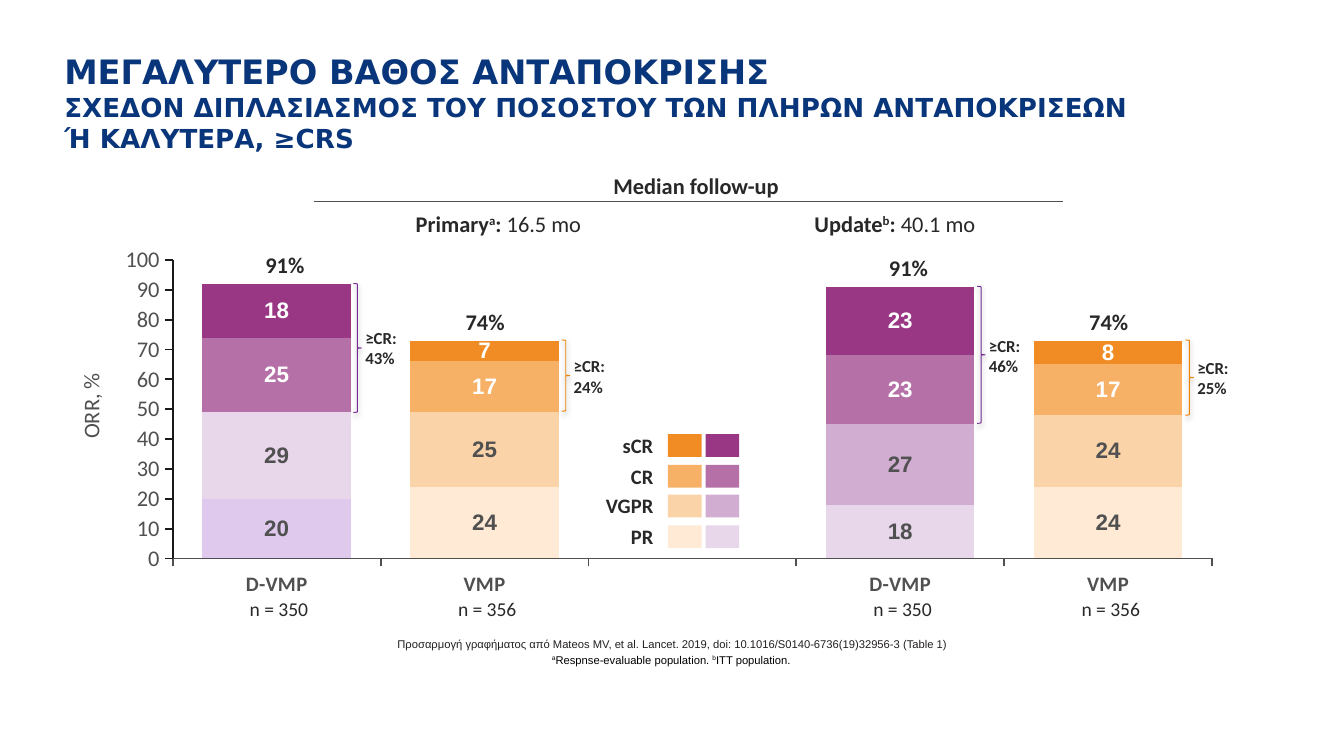
from collections import namedtuple
from dataclasses import dataclass

from lxml import etree
from pptx import Presentation
from pptx import util as u
from pptx.chart import data as chart_data
from pptx.dml.color import RGBColor
from pptx.enum import chart as ch, shapes, text
from pptx.oxml import parse_xml
from pptx.oxml.ns import nsdecls, qn

Box = namedtuple("Box", "left top width height")
Arm = namedtuple("Arm", "name patients total complete values colors accent nudge")


@dataclass(frozen=True)
class Theme:
    title: str = "09357A"
    ink: str = "282828"
    grey: str = "505050"
    axis: str = "1A1A1A"
    source: str = "231F20"
    black: str = "000000"
    white: str = "FFFFFF"
    purple_line: str = "732C94"
    orange_line: str = "EF8200"
    # Shades run from PR up to sCR
    purple: tuple = ("E8D6EA", "D1AED1", "B571A7", "9A3784")
    early_purple: tuple = ("DFCAEE", "E8D6EA", "B571A7", "9A3784")
    orange: tuple = ("FEEAD5", "FBD3A9", "F7B167", "F18C25")
    head_font: str = "DejaVu Sans"
    body_font: str = "Calibri"
    note_font: str = "Arial"
    head: float = 18
    subhead: float = 14
    body: float = 12
    label: float = 11
    patients: float = 10.5
    small: float = 9
    note: float = 6


T = Theme()
RESPONSES = ("PR", "VGPR", "CR", "sCR")
ARMS = (
    Arm("D-VMP", 350, 91, 43, (20, 29, 25, 18), T.early_purple, T.purple_line, 0.06),
    Arm("VMP", 356, 74, 24, (24, 25, 17, 7), T.orange, T.orange_line, 0),
    None,  # gap between the two analyses
    Arm("D-VMP", 350, 91, 46, (18, 27, 23, 23), T.purple, T.purple_line, 0.06),
    Arm("VMP", 356, 74, 25, (24, 24, 17, 8), T.orange, T.orange_line, 0),
)
CHART = Box(-0.67, 1.78, 10.03, 3.22)
PLOT_SHARE = Box(0.195, 0.048, 0.771, 0.69)
PLOT = Box(CHART.left + PLOT_SHARE.left * CHART.width,
           CHART.top + PLOT_SHARE.top * CHART.height,
           PLOT_SHARE.width * CHART.width, PLOT_SHARE.height * CHART.height)


def inches(box):
    return [u.Inches(round(length, 2)) for length in box]


def style_font(font, size, color, name=T.body_font, bold=False):
    font.size, font.name, font.bold = u.Pt(size), name, bold
    font.color.rgb = RGBColor.from_string(color)


def add_text(page, box, paras, size=T.body, color=T.ink, font=T.body_font, bold=False,
             align="LEFT", anchor="TOP", after=0, bottom=0.05, tabs=()):
    """Each paragraph is a list of (text, overrides); the text "\\n" is a line break."""
    frame = page.shapes.add_textbox(*inches(box)).text_frame
    frame.word_wrap = True
    frame.vertical_anchor = getattr(text.MSO_ANCHOR, anchor)
    frame.margin_bottom = u.Inches(bottom)
    for i, spans in enumerate(paras):
        para = frame.paragraphs[0] if i == 0 else frame.add_paragraph()
        tabbed = any("\t" in content for content, _ in spans)
        para.alignment = getattr(text.PP_ALIGN, "LEFT" if tabbed else align)
        if after:
            para.space_after = u.Pt(after)
        if tabbed:
            tab_list = etree.SubElement(para._p.get_or_add_pPr(), qn("a:tabLst"))
            for stop in tabs:
                etree.SubElement(tab_list, qn("a:tab"), pos=str(u.Inches(stop)), algn="ctr")
        for content, extra in spans:
            if content == "\n":
                para.add_line_break()
                continue
            span = para.add_run()
            span.text = content
            style_font(span.font, extra.get("size", size), color, font, extra.get("bold", bold))
            if extra.get("raised"):
                span._r.get_or_add_rPr().set("baseline", "30000")


def draw_title(page, box):
    add_text(page, box, [[
        ("ΜΕΓΑΛΥΤΕΡΟ ΒΑΘΟΣ ΑΝΤΑΠΟΚΡΙΣΗΣ", {}), ("\n", {}),
        ("ΣΧΕΔΟΝ ΔΙΠΛΑΣΙΑΣΜΟΣ ΤΟΥ ΠΟΣΟΣΤΟΥ ΤΩΝ ΠΛΗΡΩΝ ΑΝΤΑΠΟΚΡΙΣΕΩΝ Ή ΚΑΛΥΤΕΡΑ, ≥CRS",
         {"size": T.subhead})]],
        size=T.head, color=T.title, font=T.head_font, bold=True)


def draw_follow_up(page, box):
    raised, plain = {"raised": True}, {"bold": False}
    add_text(page, box, [
        [("Median follow-up", {})],
        [("\tPrimary", {}), ("a", raised), (": ", {}), ("16.5 mo", plain),
         ("\tUpdate", {}), ("b", raised), (":", {}), (" 40.1 mo", plain)]],
        bold=True, align="CENTER", after=6, tabs=(1.47, 4.42))
    ends = inches((box.left + 0.2, box.top + 0.27, box.left + 5.77, box.top + 0.27))
    rule = page.shapes.add_connector(shapes.MSO_CONNECTOR.STRAIGHT, *ends)
    rule.line.color.rgb = RGBColor.from_string(T.grey)
    rule.line.width = u.Pt(0.25)
    etree.SubElement(rule._element.spPr, qn("a:effectLst"))


def set_layout(parent, index, **shares):
    for old in parent.findall(qn("c:layout")):
        parent.remove(old)
    layout = etree.Element(qn("c:layout"))
    manual = etree.SubElement(layout, qn("c:manualLayout"))
    if "w" in shares:
        etree.SubElement(manual, qn("c:layoutTarget"), val="inner")
    for name in ("xMode", "yMode"):
        etree.SubElement(manual, qn("c:" + name), val="edge")
    for name, share in shares.items():
        etree.SubElement(manual, qn("c:" + name), val=str(share))
    parent.insert(index, layout)


def draw_chart(page, box):
    data = chart_data.CategoryChartData()
    data.categories = [arm.name if arm else "" for arm in ARMS]
    for level in range(len(RESPONSES)):
        data.add_series(f"Series {level + 1}", [arm.values[level] if arm else None for arm in ARMS])
    chart = page.shapes.add_chart(ch.XL_CHART_TYPE.COLUMN_STACKED, *inches(box), data).chart
    chart.has_legend = chart.has_title = False
    style_font(chart.font, T.body, T.grey, T.head_font)
    plot = chart.plots[0]
    plot.gap_width, plot.overlap, plot.vary_by_categories = 40, 100, False
    for level, series in enumerate(plot.series):
        for i, arm in enumerate(ARMS):
            if arm:
                fill = series.points[i].format.fill
                fill.solid()
                fill.fore_color.rgb = RGBColor.from_string(arm.colors[level])
        labels = series.data_labels
        labels.show_value = True
        labels.position = ch.XL_LABEL_POSITION.CENTER
        style_font(labels.font, T.body, T.grey if level < 2 else T.white, T.note_font, True)

    values = chart.value_axis
    values.minimum_scale, values.maximum_scale, values.major_unit = 0, 100, 10
    for axis, color in ((chart.category_axis, T.grey), (values, T.axis)):
        axis.has_major_gridlines = False
        axis.major_tick_mark = ch.XL_TICK_MARK.OUTSIDE
        axis.minor_tick_mark = ch.XL_TICK_MARK.NONE
        axis.format.line.color.rgb = RGBColor.from_string(color)
        axis.format.line.width = u.Pt(1)
    style_font(chart.category_axis.tick_labels.font, T.label, T.grey, bold=True)
    style_font(values.tick_labels.font, T.body, T.grey)
    para = values.axis_title.text_frame.paragraphs[0]
    span = para.add_run()
    span.text = "ORR, %"
    style_font(span.font, T.body, T.grey)
    set_layout(values.axis_title._element, 1, x=0.12, y=0.3)
    set_layout(chart._chartSpace.chart.plotArea, 0, x=PLOT_SHARE.left, y=PLOT_SHARE.top,
               w=PLOT_SHARE.width, h=PLOT_SHARE.height)


def draw_brace(page, box, color):
    brace = page.shapes.add_shape(shapes.MSO_SHAPE.RIGHT_BRACE, *inches(box))
    brace.fill.background()
    brace.line.color.rgb = RGBColor.from_string(color)
    brace.line.width = u.Pt(0.5)
    brace._element.spPr.append(parse_xml(
        f'<a:effectLst {nsdecls("a")}><a:outerShdw blurRad="{u.Pt(3.1)}" dist="{u.Pt(1.6)}" '
        f'dir="5400000" rotWithShape="0"><a:srgbClr val="{T.black}"><a:alpha val="38000"/>'
        '</a:srgbClr></a:outerShdw></a:effectLst>'))


def draw_arm_notes(page, plot, index, arm):
    """Adds the total, the brace over CR and sCR, and the patient count of one column."""
    def height_of(value):
        return plot.top + plot.height * (1 - value / 100)

    center = plot.left + plot.width / len(ARMS) * (index + 0.5)
    top, base = height_of(sum(arm.values)), height_of(sum(arm.values[:2]))
    add_text(page, Box(center + arm.nudge - 0.75, top - 0.29, 1.5, 0.31),
             [[(f"{arm.total}%", {})]], bold=True, align="CENTER")
    draw_brace(page, Box(center + 0.57, top, 0.06, base - top), arm.accent)
    add_text(page, Box(center + 0.56, (top + base) / 2 - 0.2, 0.62, 0.4),
             [[("≥CR:", {})], [(f"{arm.complete}%", {})]], size=T.small, bold=True)
    add_text(page, Box(center - 0.46, plot.top + plot.height + 0.23, 0.95, 0.28),
             [[(f"n = {arm.patients}", {})]], size=T.patients, align="CENTER")


def draw_legend(page, box):
    pitch = box.height / len(RESPONSES)
    for row, level in enumerate(reversed(range(len(RESPONSES)))):
        top = box.top + row * pitch
        add_text(page, Box(box.left, top - 0.06, 1.05, 0.29), [[(RESPONSES[level], {})]],
                 size=T.label, bold=True, align="RIGHT")
        for column, shades in enumerate((T.orange, T.purple)):
            swatch = page.shapes.add_shape(
                shapes.MSO_SHAPE.RECTANGLE,
                *inches((box.left + 1.06 + column * 0.28, top, 0.25, 0.17)))
            swatch.shadow.inherit = False
            swatch.fill.solid()
            swatch.fill.fore_color.rgb = RGBColor.from_string(shades[level])
            swatch.line.fill.background()


def draw_notes(page, box):
    add_text(page, Box(box.left + 0.46, box.top, 8.32, 0.2), [[
        ("Προσαρμογή γραφήματος από Mateos MV, et al. Lancet. 2019, "
         "doi: 10.1016/S0140-6736(19)32956-3 (Table 1)", {})]],
        size=T.note, color=T.source, font=T.note_font, align="CENTER")
    add_text(page, Box(box.left, box.top + 0.11, box.width, 0.28), [[
        ("a", {"raised": True}), ("Respnse-evaluable population. ", {}),
        ("b", {"raised": True}), ("ITT population.", {})]],
        size=T.note, color=T.black, font=T.note_font, align="CENTER", anchor="BOTTOM", bottom=0.12)


def main():
    deck = Presentation()
    deck.slide_width, deck.slide_height = u.Inches(10), u.Inches(10 * 9 / 16)
    page = deck.slides.add_slide(deck.slide_layouts[6])
    draw_title(page, Box(0.38, 0.33, 8.32, 0.77))
    draw_chart(page, CHART)
    for index, arm in enumerate(ARMS):
        if arm:
            draw_arm_notes(page, PLOT, index, arm)
    draw_legend(page, Box(3.91, 3.23, 1.6, 0.9))
    draw_follow_up(page, Box(2.14, 1.23, 6.08, 0.6))
    draw_notes(page, Box(0.38, 4.69, 9.23, 0.39))
    deck.save("out.pptx")


if __name__ == "__main__":
    main()
